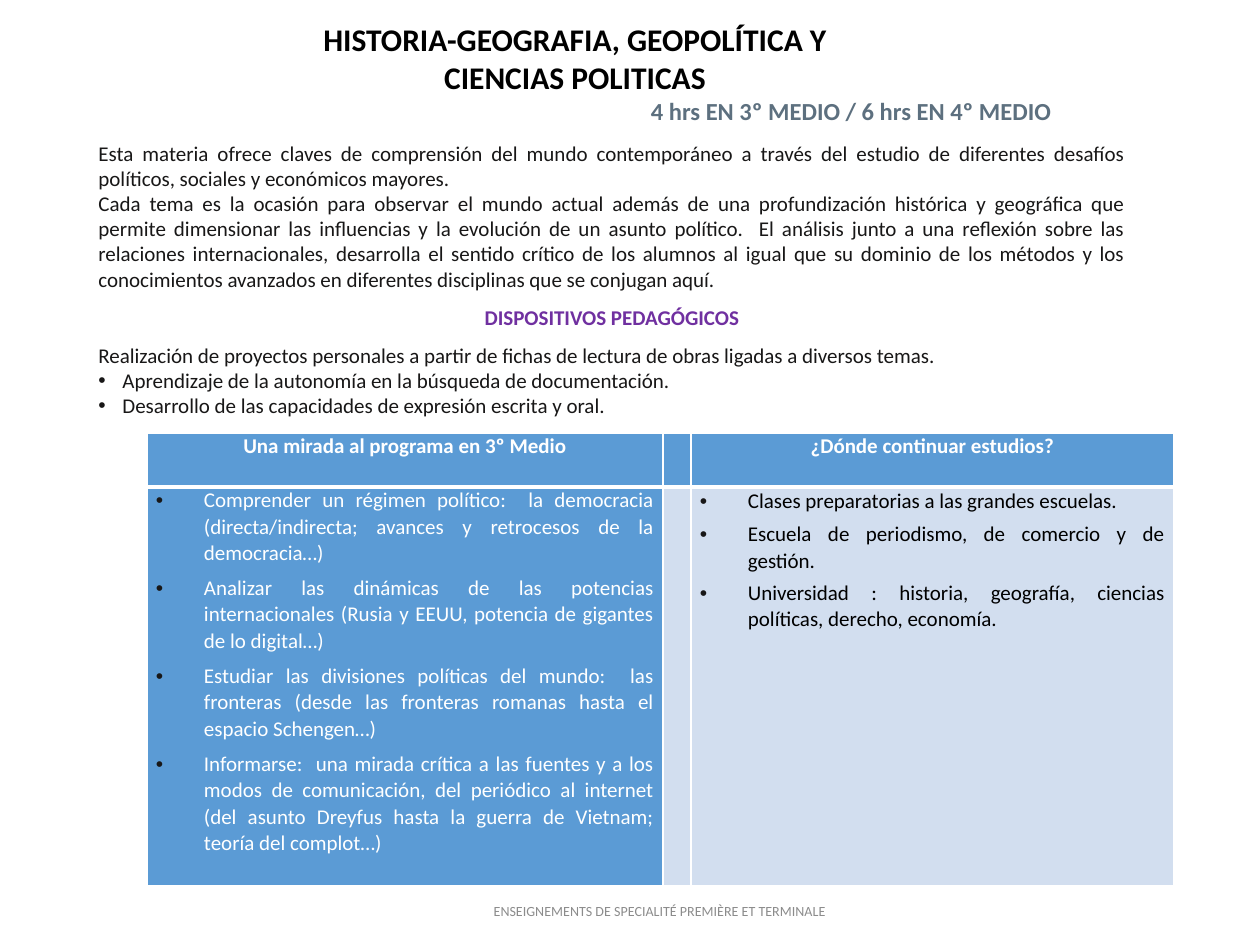
from lxml import etree
from pptx import Presentation
from pptx.dml.color import RGBColor
from pptx.enum.text import MSO_ANCHOR, PP_ALIGN
from pptx.oxml.ns import qn
from pptx.util import Emu, Pt

CENTER, RIGHT, JUSTIFY = PP_ALIGN.CENTER, PP_ALIGN.RIGHT, PP_ALIGN.JUSTIFY
TOP, MIDDLE = MSO_ANCHOR.TOP, MSO_ANCHOR.MIDDLE

BLACK = RGBColor(0x00, 0x00, 0x00)
WHITE = RGBColor(0xFF, 0xFF, 0xFF)
INK = RGBColor(0x18, 0x17, 0x17)
SLATE = RGBColor(0x5D, 0x70, 0x7F)
PURPLE = RGBColor(0x70, 0x30, 0xA0)
GRAY = RGBColor(0x8C, 0x8C, 0x8C)
BLUE = RGBColor(0x5B, 0x9B, 0xD5)
PALE_BLUE = RGBColor(0xD2, 0xDE, 0xEF)

FONT = "Calibri"
EMU_PER_PX = 914400 / 126

# Text formats: "font" and "paragraph" attributes, "indent" in px for bullets
TITLE = {"font": {"size": Pt(18), "bold": True, "color": BLACK},
         "paragraph": {"alignment": CENTER}}
HOURS = {"font": {"size": Pt(14), "bold": True, "color": SLATE},
         "paragraph": {"alignment": RIGHT}}
BODY = {"font": {"size": Pt(12), "color": INK},
        "paragraph": {"alignment": JUSTIFY}}
BODY_BULLET = {**BODY, "indent": 24}
SECTION = {"font": {"size": Pt(12), "bold": True, "color": PURPLE},
           "paragraph": {"alignment": CENTER, "space_before": Pt(7.3),
                         "space_after": Pt(7.3)}}
FOOTER = {"font": {"size": Pt(8), "color": GRAY},
          "paragraph": {"alignment": CENTER}}
HEADER = {"font": {"size": Pt(12), "bold": True, "color": WHITE},
          "paragraph": {"alignment": CENTER, "line_spacing": 1.03}}
PROGRAM = {"font": {"size": Pt(12), "color": WHITE}, "indent": 48,
           "paragraph": {"alignment": JUSTIFY, "line_spacing": 1.03,
                         "space_after": Pt(5.1)}}
STUDIES = {"font": {"size": Pt(12), "color": BLACK}, "indent": 48,
           "paragraph": {"alignment": JUSTIFY, "line_spacing": 1.07,
                         "space_after": Pt(3)}}
STUDIES_LAST = {**STUDIES, "paragraph": {**STUDIES["paragraph"],
                                         "line_spacing": 1.03}}

# Wording
TITLE_LINES = [
    ("HISTORIA-GEOGRAFIA, GEOPOLÍTICA Y", TITLE),
    ("CIENCIAS POLITICAS", TITLE),
    ("4 hrs EN 3º MEDIO / 6 hrs EN 4º MEDIO", HOURS),
]
BODY_LINES = [
    ("Esta materia ofrece claves de comprensión del mundo contemporáneo a través del "
     "estudio de diferentes desafíos políticos, sociales y económicos mayores.", BODY),
    ("Cada tema es la ocasión para observar el mundo actual además de una "
     "profundización histórica y geográfica que permite dimensionar las influencias y "
     "la evolución de un asunto político.  El análisis junto a una reflexión sobre las "
     "relaciones internacionales, desarrolla el sentido crítico de los alumnos al igual "
     "que su dominio de los métodos y los conocimientos avanzados en diferentes "
     "disciplinas que se conjugan aquí.", BODY),
    ("DISPOSITIVOS PEDAGÓGICOS", SECTION),
    ("Realización de proyectos personales a partir de fichas de lectura de obras "
     "ligadas a diversos temas.", BODY),
    ("Aprendizaje de la autonomía en la búsqueda de documentación.", BODY_BULLET),
    ("Desarrollo de las capacidades de expresión escrita y oral.", BODY_BULLET),
]
PROGRAM_LINES = [
    ("Comprender un régimen político:  la democracia (directa/indirecta; avances y "
     "retrocesos de la democracia…)", PROGRAM),
    ("Analizar las dinámicas de las potencias internacionales (Rusia y EEUU, potencia "
     "de gigantes de lo digital…)", PROGRAM),
    ("Estudiar las divisiones políticas del mundo:  las fronteras (desde las fronteras "
     "romanas hasta el espacio Schengen…)", PROGRAM),
    ("Informarse:  una mirada crítica a las fuentes y a los modos de comunicación, del "
     "periódico al internet (del asunto Dreyfus hasta la guerra de Vietnam; teoría del "
     "complot…)", PROGRAM),
]
STUDIES_LINES = [
    ("Clases preparatorias a las grandes escuelas.", STUDIES),
    ("Escuela de periodismo, de comercio y de gestión.", STUDIES),
    ("Universidad : historia, geografía, ciencias políticas, derecho, economía.",
     STUDIES_LAST),
]
FOOTER_LINES = [("ENSEIGNEMENTS DE SPECIALITÉ PREMIÈRE ET TERMINALE", FOOTER)]

# Each cell: lines and fill
TABLE_ROWS = [
    [([("Una mirada al programa en 3º Medio", HEADER)], BLUE),
     ([], BLUE),
     ([("¿Dónde continuar estudios?", HEADER)], BLUE)],
    [(PROGRAM_LINES, BLUE), ([], PALE_BLUE), (STUDIES_LINES, PALE_BLUE)],
]
COLUMN_WIDTHS = [516, 28, 483]
ROW_HEIGHTS = [54, 399]


def px(length):
    return Emu(round(length * EMU_PER_PX))


def add_bullet(paragraph, indent):
    properties = paragraph._p.get_or_add_pPr()
    properties.set("marL", str(px(indent)))
    properties.set("indent", str(-px(indent)))
    color = etree.SubElement(properties, qn("a:buClr"))
    etree.SubElement(color, qn("a:srgbClr"), val=str(INK))
    etree.SubElement(properties, qn("a:buFont"), typeface="Arial")
    etree.SubElement(properties, qn("a:buChar"), char="•")


def write_lines(text_frame, lines):
    for index, (text, style) in enumerate(lines):
        paragraph = text_frame.add_paragraph() if index else text_frame.paragraphs[0]
        for name, value in style["paragraph"].items():
            setattr(paragraph, name, value)
        if "indent" in style:
            add_bullet(paragraph, style["indent"])
        run = paragraph.add_run()
        run.text = text
        run.font.name = FONT
        for name, value in style["font"].items():
            if name == "color":
                run.font.color.rgb = value
            else:
                setattr(run.font, name, value)


def add_text(slide, box, lines, anchor=TOP):
    text_frame = slide.shapes.add_textbox(*map(px, box)).text_frame
    text_frame.word_wrap = True
    text_frame.vertical_anchor = anchor
    write_lines(text_frame, lines)


def add_borders(cell, bottom_width):
    properties = cell._tc.get_or_add_tcPr()
    for side, width in (("L", 1), ("R", 1), ("T", 1), ("B", bottom_width)):
        line = etree.SubElement(properties, qn(f"a:ln{side}"), w=str(Pt(width)))
        fill = etree.SubElement(line, qn("a:solidFill"))
        etree.SubElement(fill, qn("a:srgbClr"), val=str(WHITE))


def add_program_table(slide, left, top):
    box = (left, top, sum(COLUMN_WIDTHS), sum(ROW_HEIGHTS))
    table = slide.shapes.add_table(len(ROW_HEIGHTS), len(COLUMN_WIDTHS),
                                   *map(px, box)).table
    for column, width in zip(table.columns, COLUMN_WIDTHS):
        column.width = px(width)
    for row, height, contents in zip(table.rows, ROW_HEIGHTS, TABLE_ROWS):
        row.height = px(height)
        for cell, (lines, color) in zip(row.cells, contents):
            cell.margin_left = cell.margin_right = px(9)
            cell.margin_top = cell.margin_bottom = 0
            add_borders(cell, 3 if contents is TABLE_ROWS[0] else 1)
            cell.fill.solid()
            cell.fill.fore_color.rgb = color
            write_lines(cell.text_frame, lines)


def main():
    presentation = Presentation()
    presentation.slide_width, presentation.slide_height = px(1260), px(945)
    slide = presentation.slides.add_slide(presentation.slide_layouts[6])

    add_program_table(slide, 147, 433)
    add_text(slide, (86, 134, 1052, 290), BODY_LINES)
    add_text(slide, (86, 14, 978, 118), TITLE_LINES)
    add_text(slide, (321, 886, 678, 50), FOOTER_LINES, MIDDLE)

    presentation.save("out.pptx")


if __name__ == "__main__":
    main()
